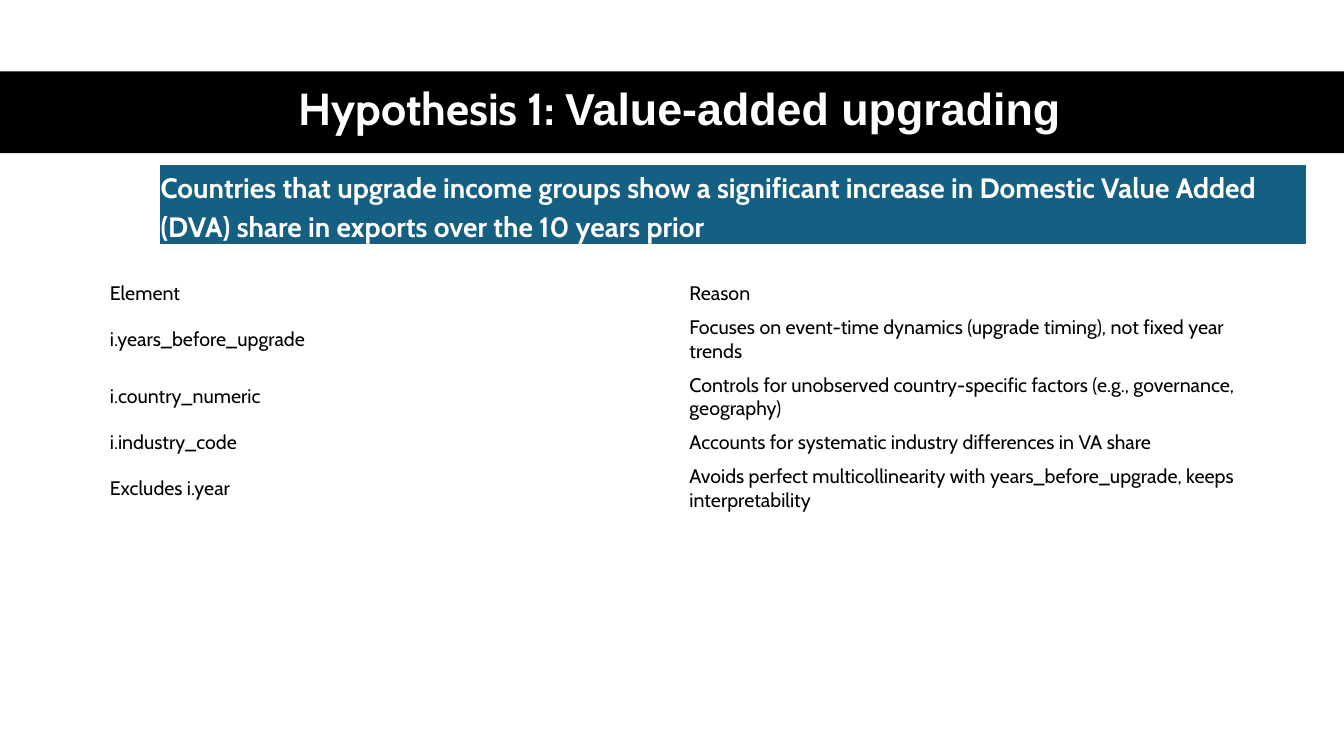
import pptx
import pptx.dml.color
import pptx.enum.shapes
import pptx.enum.text
import pptx.oxml
import pptx.oxml.ns
import pptx.util

PX = 9525
BLACK = pptx.dml.color.RGBColor(0x00, 0x00, 0x00)
WHITE = pptx.dml.color.RGBColor(0xFF, 0xFF, 0xFF)
BLUE = pptx.dml.color.RGBColor(0x15, 0x60, 0x82)
BODY_FONT = "Cabin"

TITLE_RUNS = [("Hypothesis 1: ", BODY_FONT), ("Value-added upgrading", "Arial")]
HYPOTHESIS = (
    "Countries that upgrade income groups show a significant increase in "
    "Domestic Value Added (DVA) share in exports over the 10 years prior"
)
REASONS = [
    ("Element", "Reason"),
    ("i.years_before_upgrade",
     "Focuses on event-time dynamics (upgrade timing), not fixed year trends"),
    ("i.country_numeric",
     "Controls for unobserved country-specific factors (e.g., governance, geography)"),
    ("i.industry_code", "Accounts for systematic industry differences in VA share"),
    ("Excludes i.year",
     "Avoids perfect multicollinearity with years_before_upgrade, keeps interpretability"),
]
REASON_HEIGHTS = [32, 54, 54, 32, 54]
BANNER_BORDERS = {"a:lnL": 1, "a:lnR": 1, "a:lnT": 1, "a:lnB": 3}


def px(*lengths):
    return [pptx.util.Emu(length * PX) for length in lengths]


def format_paragraph(paragraph, size, color, bold=False):
    paragraph.font.size = pptx.util.Pt(size)
    paragraph.font.color.rgb = color
    paragraph.font.bold = bold


def add_title(slide):
    bar = slide.shapes.add_shape(
        pptx.enum.shapes.MSO_SHAPE.RECTANGLE, *px(0, 68, 1280, 78))
    bar.shadow.inherit = False
    bar.fill.solid()
    bar.fill.fore_color.rgb = BLACK
    bar.line.fill.background()

    title = slide.shapes.title
    title.left, title.top, title.width, title.height = px(59, 67, 1177, 78)
    title.element.addprevious(bar.element)
    frame = title.text_frame
    frame.auto_size = pptx.enum.text.MSO_AUTO_SIZE.NONE
    frame.vertical_anchor = pptx.enum.text.MSO_ANCHOR.MIDDLE
    paragraph = frame.paragraphs[0]
    paragraph.alignment = pptx.enum.text.PP_ALIGN.CENTER
    paragraph.line_spacing = 0.9
    format_paragraph(paragraph, 32, WHITE, bold=True)
    for text, font_name in TITLE_RUNS:
        run = paragraph.add_run()
        run.text = text
        run.font.name = font_name


def add_table(slide, left, top, width, rows, heights, size, color, bold=False, fill=None):
    column_count = len(rows[0])
    table = slide.shapes.add_table(
        len(rows), column_count, *px(left, top, width, sum(heights))).table
    table.first_row = False
    table.horz_banding = False
    for row, texts, height in zip(table.rows, rows, heights):
        row.height = px(height)[0]
        for cell, text in zip(row.cells, texts):
            cell.text = text
            cell.vertical_anchor = pptx.enum.text.MSO_ANCHOR.MIDDLE
            paragraph = cell.text_frame.paragraphs[0]
            format_paragraph(paragraph, size, color, bold)
            paragraph.font.name = BODY_FONT
            if fill is None:
                cell.fill.background()
            else:
                cell.fill.solid()
                cell.fill.fore_color.rgb = fill
    return table


def add_borders(cell, borders, color):
    properties = cell._tc.get_or_add_tcPr()
    for position, (tag, points) in enumerate(borders.items()):
        line = pptx.oxml.parse_xml(
            f'<{tag} {pptx.oxml.ns.nsdecls("a")} w="{pptx.util.Pt(points)}">'
            f'<a:solidFill><a:srgbClr val="{color}"/></a:solidFill></{tag}>')
        properties.insert(position, line)


def add_banner(slide):
    table = add_table(slide, 152, 157, 1092, [(HYPOTHESIS,)], [74], 20, WHITE, True, BLUE)
    cell = table.cell(0, 0)
    cell.margin_left = cell.margin_top = cell.margin_right = cell.margin_bottom = px(1)[0]
    paragraph = cell.text_frame.paragraphs[0]
    paragraph.line_spacing = 1.15
    paragraph.space_after = pptx.util.Pt(10)
    add_borders(cell, BANNER_BORDERS, WHITE)


def main():
    presentation = pptx.Presentation()
    presentation.slide_width, presentation.slide_height = px(1280, 720)
    slide = presentation.slides.add_slide(presentation.slide_layouts[5])
    add_title(slide)
    add_table(slide, 95, 263, 1104, REASONS, REASON_HEIGHTS, 14, BLACK)
    add_banner(slide)
    presentation.save("out.pptx")


if __name__ == "__main__":
    main()
